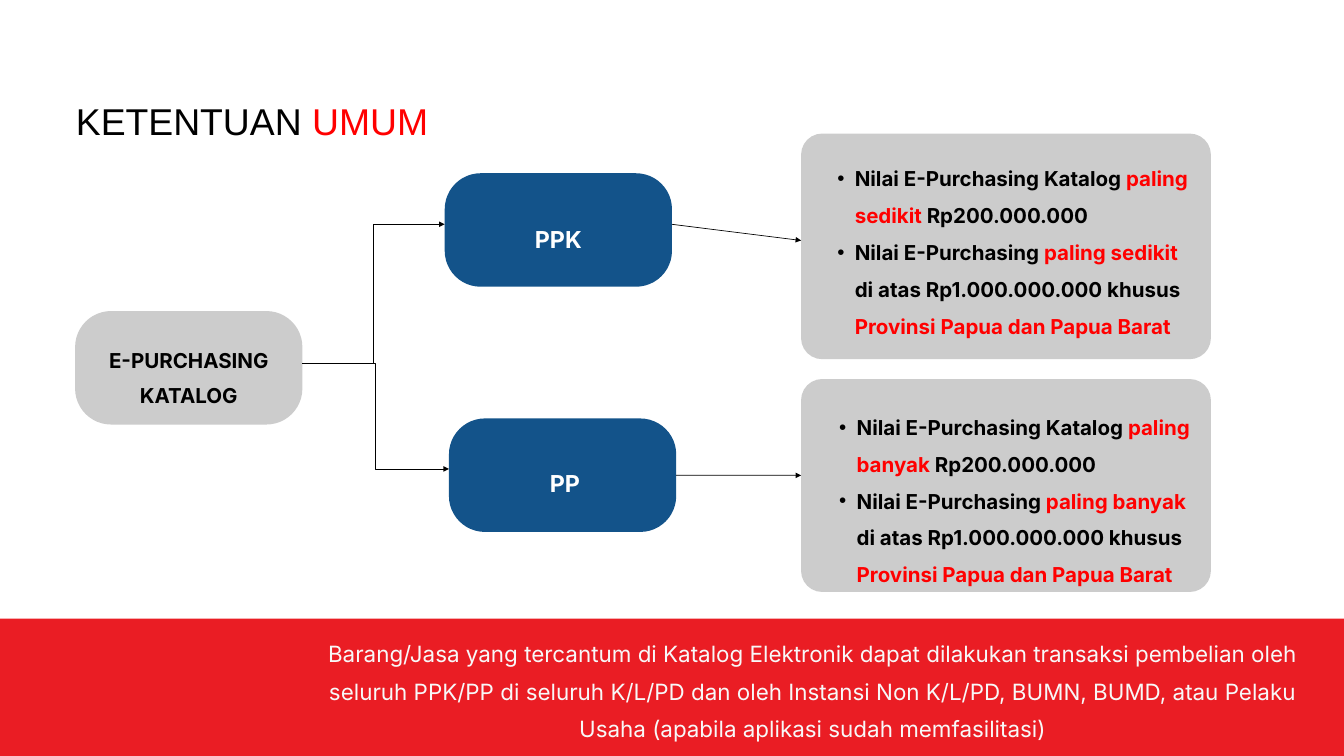
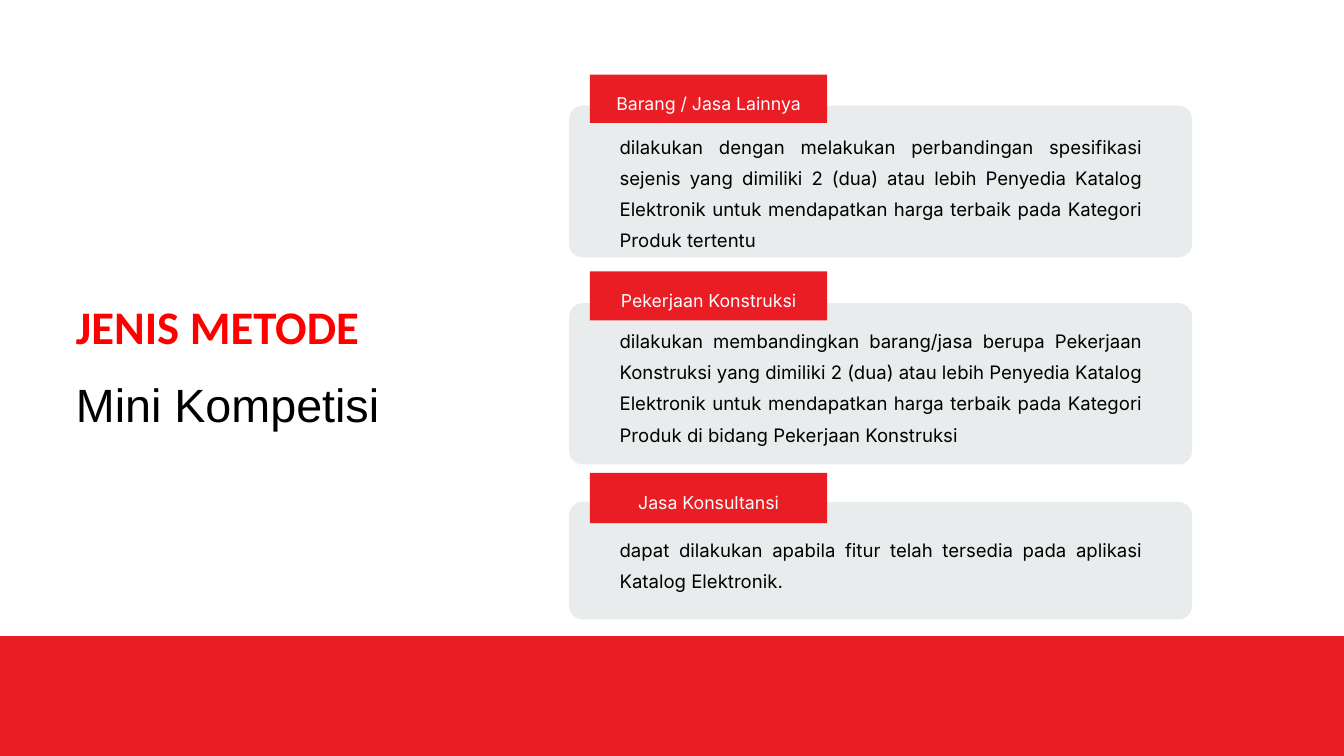
import pptx
import pptx.dml.color
import pptx.enum.shapes
import pptx.enum.text
import pptx.oxml
import pptx.oxml.ns
import pptx.util

Cm, Pt = pptx.util.Cm, pptx.util.Pt
qn = pptx.oxml.ns.qn
SHAPE = pptx.enum.shapes.MSO_SHAPE
LINE = pptx.enum.shapes.MSO_CONNECTOR
ALIGN = pptx.enum.text.PP_ALIGN
ANCHOR = pptx.enum.text.MSO_ANCHOR

WIDTH, HEIGHT = 50.8, 28.58
TITLE_LEFT = 2.87
BLACK, WHITE, HIGHLIGHT = "000000", "FFFFFF", "FF0000"
RED, BLUE, GREY, PALE = "EA1D24", "13538A", "CCCCCC", "E8ECEC"
BAND_TEXT, TAG_TEXT = "F8F8F8", "FDFDFD"
TITLE_ONLY, TWO_CONTENT = 5, 3


def rgb(value):
    return pptx.dml.color.RGBColor.from_string(value)


class Deck:
    def __init__(self):
        self.prs = pptx.Presentation()
        self.prs.slide_width, self.prs.slide_height = Cm(WIDTH), Cm(HEIGHT)
        self.s = None

    def slide(self, layout):
        self.s = self.prs.slides.add_slide(self.prs.slide_layouts[layout])

    def set_text(self, tf, paragraphs, size, font="Inter", bold=False,
                 align=ALIGN.LEFT, spacing=1.4, anchor=ANCHOR.TOP, margin=0):
        """Fill a frame; each paragraph is a list of (text, colour) runs."""
        tf.word_wrap = True
        tf.auto_size = pptx.enum.text.MSO_AUTO_SIZE.NONE
        tf.vertical_anchor = anchor
        tf.margin_left = tf.margin_right = Cm(margin)
        tf.margin_top = tf.margin_bottom = Cm(margin)
        for i, runs in enumerate(paragraphs):
            p = tf.add_paragraph() if i else tf.paragraphs[0]
            p.alignment, p.line_spacing = align, spacing
            p.space_before = Pt(0)
            for text, colour in runs:
                r = p.add_run()
                r.text = text
                r.font.size, r.font.name, r.font.bold = Pt(size), font, bold
                r.font.color.rgb = rgb(colour)

    def place(self, ph, x, y, w, h):
        """Move a placeholder and bring it to the front."""
        ph.left, ph.top, ph.width, ph.height = Cm(x), Cm(y), Cm(w), Cm(h)
        ph.element.getparent().append(ph.element)
        return ph.text_frame

    def title(self, y, w, h, paragraphs, size, spacing):
        tf = self.place(self.s.shapes.title, TITLE_LEFT, y, w, h)
        self.set_text(tf, paragraphs, size, "Arial", spacing=spacing)
        return tf

    def bullets(self, idx, x, y, w, h, paragraphs):
        tf = self.place(self.s.placeholders[idx], x, y, w, h)
        self.set_text(tf, paragraphs, 22, bold=True, spacing=1.5)
        for p in tf.paragraphs:
            pPr = p._p.get_or_add_pPr()
            pPr.set("marL", str(Cm(1.32)))
            pPr.set("indent", str(-Cm(0.66)))

    def text(self, x, y, w, h, text, size, colour=BLACK, **style):
        box = self.s.shapes.add_textbox(Cm(x), Cm(y), Cm(w), Cm(h))
        self.set_text(box.text_frame, [[(text, colour)]], size, **style)

    def box(self, x, y, w, h, fill, radius=0):
        kind = SHAPE.ROUNDED_RECTANGLE if radius else SHAPE.RECTANGLE
        sp = self.s.shapes.add_shape(kind, Cm(x), Cm(y), Cm(w), Cm(h))
        if radius:
            sp.adjustments[0] = radius / min(w, h)
        sp.shadow.inherit = False
        sp.fill.solid()
        sp.fill.fore_color.rgb = rgb(fill)
        sp.line.fill.background()
        return sp

    def band(self, y):
        self.box(0, y, WIDTH, HEIGHT - y, RED)

    def node(self, x, y, fill):
        return self.box(x, y, 8.59, 4.29, fill, 1.36)

    def tag(self, y, h, text):
        sp = self.box(22.3, y, 8.97, h, RED)
        self.set_text(sp.text_frame, [[(text, TAG_TEXT)]], 19,
                      align=ALIGN.CENTER, anchor=ANCHOR.MIDDLE, margin=0.15)

    def arrow(self, x1, y1, x2, y2, kind=LINE.STRAIGHT):
        c = self.s.shapes.add_connector(kind, Cm(x1), Cm(y1), Cm(x2), Cm(y2))
        c.line.color.rgb = rgb(BLACK)
        c.line.width = Pt(0.75)
        spPr = c.element.spPr
        head = spPr.makeelement(qn("a:tailEnd"), {"type": "triangle"})
        spPr.find(qn("a:ln")).append(head)
        spPr.append(spPr.makeelement(qn("a:effectLst"), {}))
        return c


def limits(bound):
    """The two rules on purchase value, for a lower or an upper bound."""
    return [
        [("Nilai E-Purchasing Katalog ", BLACK), (bound, HIGHLIGHT),
         (" Rp200.000.000", BLACK)],
        [("Nilai E-Purchasing ", BLACK), (bound, HIGHLIGHT),
         (" di atas Rp1.000.000.000 khusus ", BLACK),
         ("Provinsi Papua dan Papua Barat", HIGHLIGHT)],
    ]


def general_rules(deck):
    deck.slide(TWO_CONTENT)
    deck.title(1.96, 43.38, 2.59,
               [[("KETENTUAN", BLACK), (" UMUM", HIGHLIGHT)]], 40, 2.03)
    deck.band(23.39)
    deck.text(12.17, 23.8, 37.08, 4.32,
              "Barang/Jasa yang tercantum di Katalog Elektronik dapat dilakukan "
              "transaksi pembelian oleh seluruh PPK/PP di seluruh K/L/PD dan oleh "
              "Instansi Non K/L/PD, BUMN, BUMD, atau Pelaku Usaha (apabila "
              "aplikasi sudah memfasilitasi)",
              24, BAND_TEXT, align=ALIGN.CENTER)

    deck.node(2.84, 11.76, GREY)
    deck.node(16.81, 6.55, BLUE)
    pp = deck.node(16.97, 15.82, BLUE)
    for x, y, h, label, size, colour in [
            (3.81, 12.8, 2.11, "E-PURCHASING KATALOG", 22, BLACK),
            (17.78, 8.1, 1.14, "PPK", 25, WHITE),
            (18.03, 17.32, 1.14, "PP", 25, WHITE)]:
        deck.text(x, y, 6.65, h, label, size, colour, bold=True,
                  align=ALIGN.CENTER)

    for idx, top, height, list_x, list_y, bound in [
            (1, 5.05, 8.53, 30.99, 5.82, "paling sedikit"),
            (2, 14.33, 8.05, 31.06, 15.21, "paling banyak")]:
        deck.box(30.28, top, 15.49, height, GREY, 0.8)
        deck.bullets(idx, list_x, list_y, 13.92, 5.77, limits(bound))

    deck.arrow(11.43, 13.72, 16.81, 8.48, LINE.ELBOW)
    deck.arrow(11.43, 13.72, 16.97, 17.73, LINE.ELBOW)
    deck.arrow(25.4, 8.48, 30.28, 9.09)
    deck.arrow(25.56, 17.97, 30.28, 17.97).begin_connect(pp, 3)


def mini_competition(deck):
    deck.slide(TITLE_ONLY)
    tf = deck.title(10.41, 17.6, 4.78, [[("JENIS METODE", HIGHLIGHT)],
                                        [("Mini Kompetisi", BLACK)]], 50, 1.4)
    heading = tf.paragraphs[0].runs[0].font
    heading.name, heading.bold = "Calibri", True

    methods = [
        (3.99, 5.74, 2.82, 1.83, 4.8, 3.91, "Barang / Jasa Lainnya",
         "dilakukan dengan melakukan perbandingan spesifikasi sejenis yang "
         "dimiliki 2 (dua) atau lebih Penyedia Katalog Elektronik untuk "
         "mendapatkan harga terbaik pada Kategori Produk tertentu"),
        (11.46, 6.1, 10.26, 1.85, 12.14, 3.91, "Pekerjaan Konstruksi",
         "dilakukan membandingkan barang/jasa berupa Pekerjaan Konstruksi yang "
         "dimiliki 2 (dua) atau lebih Penyedia Katalog Elektronik untuk "
         "mendapatkan harga terbaik pada Kategori Produk di bidang Pekerjaan "
         "Konstruksi"),
        (18.97, 4.45, 17.88, 1.9, 20.02, 1.91, "Jasa Konsultansi",
         "dapat dilakukan apabila fitur telah tersedia pada aplikasi Katalog "
         "Elektronik."),
    ]
    for top, height, tag_y, tag_h, text_y, text_h, label, text in methods:
        deck.box(21.51, top, 23.55, height, PALE, 0.52)
        deck.tag(tag_y, tag_h, label)
        deck.text(23.42, text_y, 19.76, text_h, text, 19.9,
                  align=ALIGN.JUSTIFY)
    deck.band(24.05)


def main():
    deck = Deck()
    general_rules(deck)
    mini_competition(deck)
    deck.prs.save("out.pptx")


if __name__ == "__main__":
    main()
